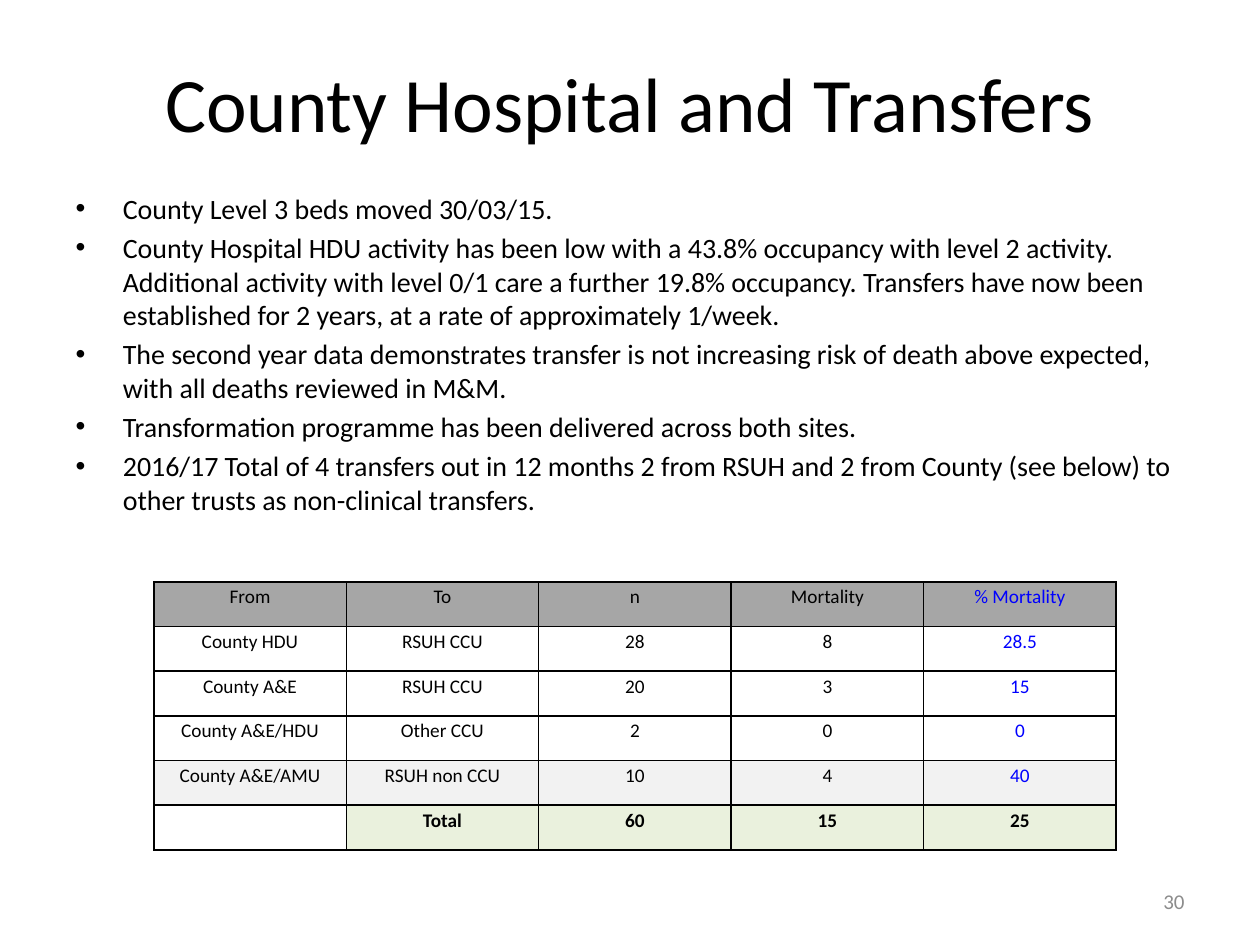
"""Build the County Hospital and Transfers slide."""
from lxml.etree import SubElement
from pptx import Presentation
from pptx.dml.color import RGBColor
from pptx.enum.text import MSO_ANCHOR as Anchor, MSO_AUTO_SIZE as AutoSize, PP_ALIGN as Align
from pptx.oxml.ns import qn
from pptx.util import Cm, Pt

BULLETS = [
    "County Level 3 beds moved 30/03/15.",
    "County Hospital HDU activity has been low with a 43.8% occupancy with level 2 activity. "
    "Additional activity with level 0/1 care a further 19.8% occupancy. Transfers have now been "
    "established for 2 years, at a rate of approximately 1/week.",
    "The second year data demonstrates transfer is not increasing risk of death above expected, "
    "with all deaths reviewed in M&M.",
    "Transformation programme has been delivered across both sites.",
    "2016/17 Total of 4 transfers out in 12 months 2 from RSUH and 2 from County (see below) to "
    "other trusts as non-clinical transfers.",
]
TRANSFERS = [
    ["From", "To", "n", "Mortality", "% Mortality"],
    ["County HDU", "RSUH CCU", "28", "8", "28.5"],
    ["County A&E", "RSUH CCU", "20", "3", "15"],
    ["County A&E/HDU", "Other CCU", "2", "0", "0"],
    ["County A&E/AMU", "RSUH non CCU", "10", "4", "40"],
    ["", "Total", "60", "15", "25"],
]
ROW_FILLS = ["A6A6A6", None, None, None, "F2F2F2", "EAF1DD"]


def color(value):
    return RGBColor.from_string(value)


def write(paragraph, text, size, fill="000000", bold=False, align=None, spacing=None, font="Calibri"):
    run = paragraph.add_run()
    run.text = text
    run.font.name = font
    run.font.size = Pt(size)
    run.font.bold = bold
    run.font.color.rgb = color(fill)
    paragraph.alignment = align
    paragraph.line_spacing = spacing


def place(shape, left, top, width, height):
    shape.left, shape.top, shape.width, shape.height = map(Cm, (left, top, width, height))


def add_borders(cell, fill="000000", width=1):
    properties = cell._tc.get_or_add_tcPr()
    for side in ("lnL", "lnR", "lnT", "lnB"):
        line = SubElement(properties, qn(f"a:{side}"), w=str(Pt(width)))
        SubElement(SubElement(line, qn("a:solidFill")), qn("a:srgbClr"), val=fill)


class SlideBuilder:
    def __init__(self, slide, accent="0000FF", muted="8C8C8C"):
        self.slide = slide
        self.accent = accent
        self.muted = muted

    def add_title(self, text, *box):
        title = self.slide.shapes.title
        place(title, *box)
        title.text_frame.vertical_anchor = Anchor.MIDDLE
        write(title.text_frame.paragraphs[0], text, 44, align=Align.CENTER)

    def add_bullets(self, items, *box):
        body = self.slide.placeholders[1]
        place(body, *box)
        frame = body.text_frame
        frame.auto_size = AutoSize.NONE
        for index, item in enumerate(items):
            paragraph = frame.add_paragraph() if index else frame.paragraphs[0]
            write(paragraph, item, 16)

    def add_page_number(self, text, *box):
        frame = self.slide.shapes.add_textbox(*map(Cm, box)).text_frame
        frame.word_wrap = True
        frame.vertical_anchor = Anchor.MIDDLE
        write(frame.paragraphs[0], text, 12, fill=self.muted, align=Align.RIGHT)

    def add_table(self, rows, fills, left, top, column_width, row_height):
        columns = len(rows[0])
        size = Cm(column_width * columns), Cm(row_height * len(rows))
        table = self.slide.shapes.add_table(len(rows), columns, Cm(left), Cm(top), *size).table
        table.first_row = table.horz_banding = False
        for column in table.columns:
            column.width = Cm(column_width)
        for row, texts, fill in zip(table.rows, rows, fills):
            row.height = Cm(row_height)
            for index, (cell, text) in enumerate(zip(row.cells, texts)):
                total = texts is rows[-1]
                accented = index == columns - 1 and not total
                self.fill_cell(cell, text, fill if text else None, total, accented)

    def fill_cell(self, cell, text, fill, bold, accented):
        cell.margin_left = cell.margin_right = Cm(0.18)
        cell.margin_top = cell.margin_bottom = 0
        add_borders(cell)
        if fill:
            cell.fill.solid()
            cell.fill.fore_color.rgb = color(fill)
        else:
            cell.fill.background()
        write(cell.text_frame.paragraphs[0], text, 11, fill=self.accent if accented else "000000",
              bold=bold, align=Align.CENTER, spacing=1.15)


def main():
    presentation = Presentation()
    presentation.slide_width, presentation.slide_height = Cm(25.4), Cm(19.05)
    builder = SlideBuilder(presentation.slides.add_slide(presentation.slide_layouts[1]))
    builder.add_title("County Hospital and Transfers", 1.27, 0.76, 22.86, 2.57)
    builder.add_bullets(BULLETS, 1.27, 3.73, 22.86, 7.6)
    builder.add_page_number("30", 18.2, 17.66, 5.93, 1.01)
    builder.add_table(TRANSFERS, ROW_FILLS, 3.1, 11.73, 3.88, 0.9)
    presentation.save("out.pptx")


if __name__ == "__main__":
    main()
